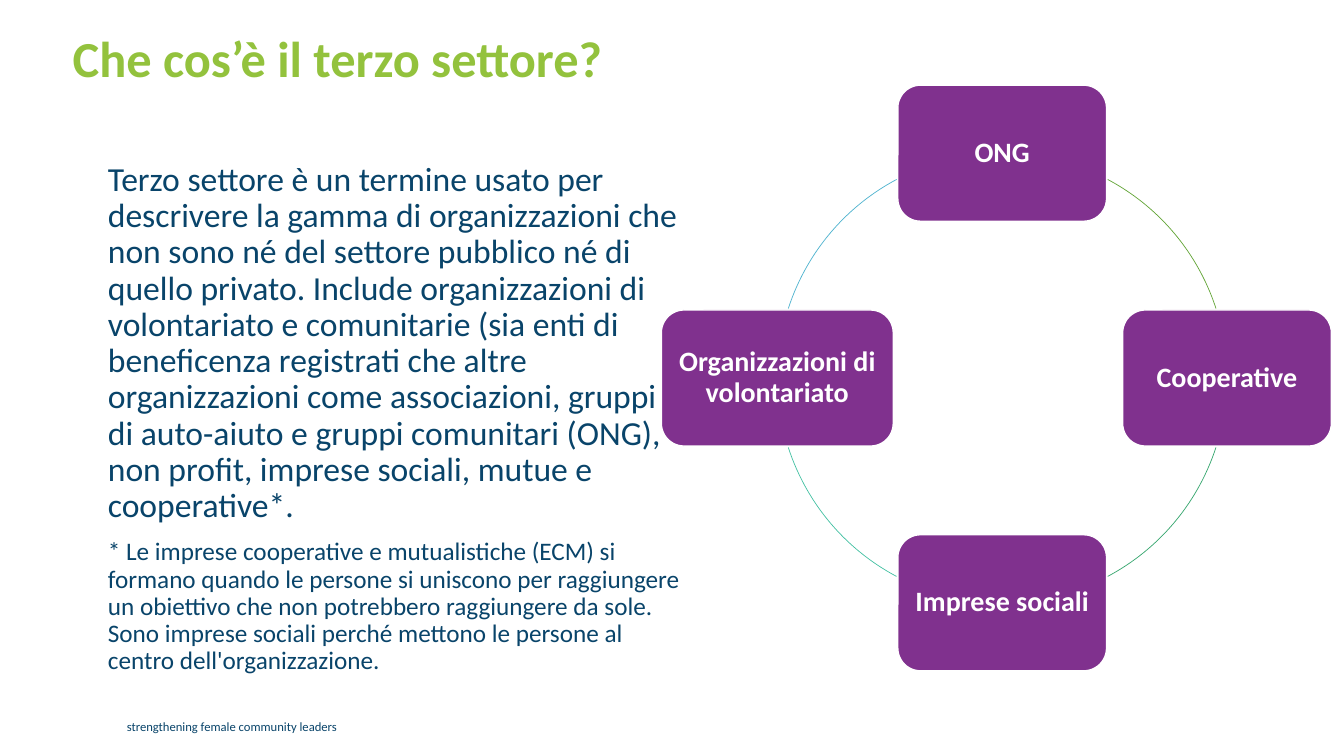
from dataclasses import dataclass

from lxml import etree
from pptx import Presentation
from pptx.dml.color import RGBColor
from pptx.enum.shapes import MSO_SHAPE
from pptx.enum.text import MSO_ANCHOR, MSO_AUTO_SIZE, PP_ALIGN
from pptx.oxml.ns import qn
from pptx.util import Inches, Pt

ROUNDED, ARC = MSO_SHAPE.ROUNDED_RECTANGLE, MSO_SHAPE.ARC
TOP, MIDDLE = MSO_ANCHOR.TOP, MSO_ANCHOR.MIDDLE
LEFT, CENTER = PP_ALIGN.LEFT, PP_ALIGN.CENTER
NO_FIT = MSO_AUTO_SIZE.NONE

FONT = "Calibri"
COLORS = {"navy": "09446A", "lime": "93C23D", "purple": "80318E", "white": "FFFFFF"}

# Ring of organisations: centre, radius, box height and angle covered by each arc
RING_X, RING_Y, RADIUS = 9.94, 3.75, 2.23
NODE_H = 1.35
ARC_SWEEP = 44


@dataclass
class Node:
    label: str
    dx: int
    dy: int
    width: float
    arc_start: int
    arc_color: str


NODES = [
    Node("ONG", 0, -1, 2.07, 298, "63A537"),
    Node("Cooperative", 1, 0, 2.07, 18, "37A76F"),
    Node("Imprese sociali", 0, 1, 2.07, 118, "44C1A3"),
    Node("Organizzazioni di volontariato", -1, 0, 2.3, 198, "4EB3CF"),
]

BODY = [
    ("Terzo settore è un termine usato per descrivere la gamma di organizzazioni che "
     "non sono né del settore pubblico né di quello privato. Include organizzazioni di "
     "volontariato e comunitarie (sia enti di beneficenza registrati che altre "
     "organizzazioni come associazioni, gruppi di auto-aiuto e gruppi comunitari (ONG), "
     "non profit, imprese sociali, mutue e cooperative*.", 24),
    ("* Le imprese cooperative e mutualistiche (ECM) si formano quando le persone si "
     "uniscono per raggiungere un obiettivo che non potrebbero raggiungere da sole. "
     "Sono imprese sociali perché mettono le persone al centro dell'organizzazione.", 18),
]


def rgb(value: str) -> RGBColor:
    return RGBColor.from_string(value)


def place(sp, left: float, top: float, width: float, height: float) -> None:
    sp.left, sp.top = Inches(left), Inches(top)
    sp.width, sp.height = Inches(width), Inches(height)


def write(p, text: str, size: float, color: str, bold: bool = False,
          align=LEFT, before: float = 0) -> None:
    p.alignment = align
    p.line_spacing = 0.9
    p.space_before = Pt(before)
    r = p.add_run()
    r.text = text
    r.font.name, r.font.size, r.font.bold = FONT, Pt(size), bold
    r.font.color.rgb = rgb(color)


def remove_bullet(p) -> None:
    pPr = p._p.get_or_add_pPr()
    pPr.set("marL", "0")
    pPr.set("indent", "0")
    etree.SubElement(pPr, qn("a:buNone"))


def add_title(s) -> None:
    sp = s.shapes.title
    place(sp, 0.62, 0.29, 7.95, 1.31)
    tf = sp.text_frame
    tf.auto_size, tf.vertical_anchor = NO_FIT, TOP
    write(tf.paragraphs[0], "Che cos’è il terzo settore?", 36, COLORS["lime"], bold=True)


def add_body(s) -> None:
    sp = s.placeholders[1]
    place(sp, 0.97, 1.56, 5.89, 5.66)
    tf = sp.text_frame
    tf.auto_size, tf.vertical_anchor = NO_FIT, TOP
    for i, (text, size) in enumerate(BODY):
        p = tf.add_paragraph() if i else tf.paragraphs[0]
        remove_bullet(p)
        write(p, text, size, COLORS["navy"], before=10 if i else 0)


def add_footer(s) -> None:
    sp = s.shapes.add_textbox(Inches(1.16), Inches(7.08), Inches(2.33), Inches(0.25))
    tf = sp.text_frame
    tf.word_wrap = False
    p = tf.paragraphs[0]
    write(p, "strengthening female community leaders", 9, COLORS["navy"])
    p.line_spacing = 1.0


def add_node(s, node: Node) -> None:
    left = RING_X + node.dx * RADIUS - node.width / 2
    top = RING_Y + node.dy * RADIUS - NODE_H / 2
    sp = s.shapes.add_shape(ROUNDED, Inches(left), Inches(top),
                            Inches(node.width), Inches(NODE_H))
    sp.shadow.inherit = False
    sp.fill.solid()
    sp.fill.fore_color.rgb = rgb(COLORS["purple"])
    sp.line.color.rgb = rgb(COLORS["white"])
    sp.line.width = Pt(1)
    tf = sp.text_frame
    tf.word_wrap, tf.vertical_anchor = True, MIDDLE
    tf.margin_left = tf.margin_right = tf.margin_top = tf.margin_bottom = Inches(0.08)
    write(tf.paragraphs[0], node.label, 20, COLORS["white"], bold=True, align=CENTER)


def add_arc(s, node: Node) -> None:
    """Draw the stretch of the ring that leads clockwise from this node."""
    sp = s.shapes.add_shape(ARC, Inches(RING_X - RADIUS), Inches(RING_Y - RADIUS),
                            Inches(2 * RADIUS), Inches(2 * RADIUS))
    sp.shadow.inherit = False
    sp.fill.background()
    # An adjustment of 0.6 equals one degree
    sp.adjustments[0] = node.arc_start * 0.6
    sp.adjustments[1] = (node.arc_start + ARC_SWEEP) * 0.6
    sp.line.color.rgb = rgb(node.arc_color)
    sp.line.width = Pt(0.5)


def main() -> None:
    prs = Presentation()
    prs.slide_width, prs.slide_height = Inches(13.33), Inches(7.5)
    s = prs.slides.add_slide(prs.slide_layouts[1])
    add_footer(s)
    add_body(s)
    add_title(s)
    for node in NODES:
        add_node(s, node)
        add_arc(s, node)
    prs.save("out.pptx")


if __name__ == "__main__":
    main()
